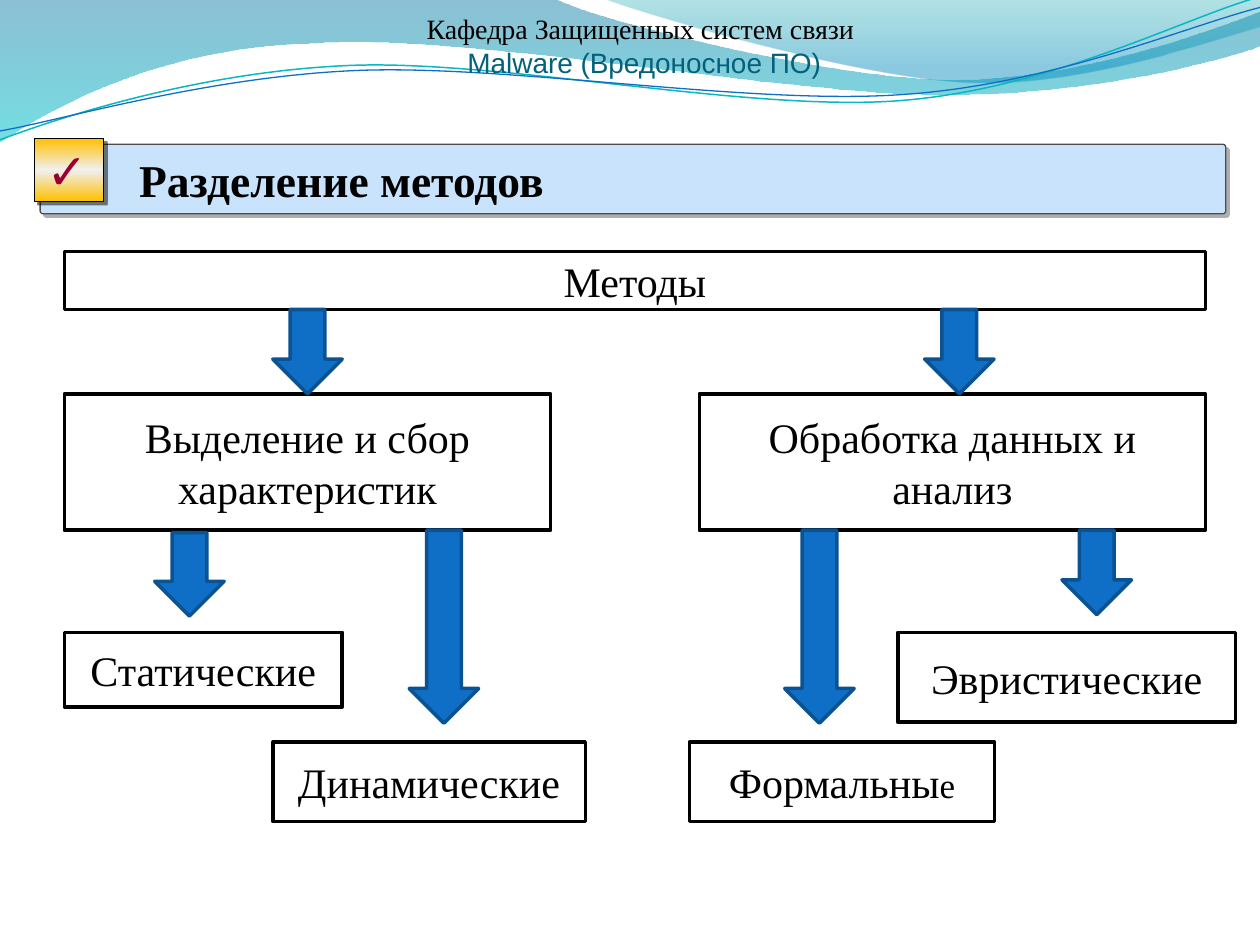
from math import cos, radians, sin

from pptx import Presentation
from pptx import util as u
from pptx.dml.color import RGBColor
from pptx.enum import shapes, text
from pptx.oxml import parse_xml
from pptx.oxml.ns import nsdecls, qn

BLACK = RGBColor(0, 0, 0)
WHITE = RGBColor(255, 255, 255)
TEAL = RGBColor(0x04, 0x61, 0x7B)
AQUA = RGBColor(0x0A, 0xB8, 0xBF)
BLUE = RGBColor(0x0F, 0x6F, 0xC6)
NAVY = RGBColor(0x0B, 0x52, 0x92)
SKY = RGBColor(0xC8, 0xE3, 0xFB)
GREY = RGBColor(0x4D, 0x4D, 0x4D)
WINE = RGBColor(0x99, 0x00, 0x33)
SERIF, SANS = "Times New Roman", "Arial"
KIND = shapes.MSO_SHAPE
MID = text.MSO_ANCHOR.MIDDLE
TILT = 2.7  # degrees by which the thin waves rise to the right

# Wave points in tenths of the band's width; a six-number step is a curve
FILLS = [
    ([(0, 0), (4.4, -.01), (4.76, .17, 6.64, .63, 7.58, .63),
      (8.53, .63, 9.58, .26, 10, .09), (10.01, .36),
      (9.83, .44, 8.7, .76, 7.46, .75), (6.22, .75, 3.82, .28, 2.57, .34),
      (1.29, .36, .46, .83, -.01, 1.13)],
     [(0, "0074A1", 45), (100, "00C6CF", 55)]),
    ([(4.79, -.01), (5.09, .11, 6.82, .62, 7.69, .65),
      (8.56, .69, 9.61, .32, 10, .21), (10, 0)],
     [(0, "00A1A9", 30), (80, "008BBF", 45)]),
]
LINES = [
    ([(0, 1.11), (.48, .93, 1.58, .57, 2.77, .52),
      (3.95, .47, 5.93, .89, 7.13, .8), (8.33, .71, 9.38, .15, 9.98, -.02)],
     AQUA, .85),
    ([(0, 1.04), (.47, .96, 1.64, .61, 2.83, .56),
      (4.03, .51, 5.97, .84, 7.17, .75), (8.36, .67, 9.41, .21, 10, .06)],
     BLUE, .75),
]

# Diagram parts in cm from its corner: left, top, width, height, label
BOXES = [
    (0, 0, 23, 1.17, "Методы"),
    (0, 2.87, 9.8, 2.75, "Выделение и сбор характеристик"),
    (12.8, 2.87, 10.2, 2.75, "Обработка данных и анализ"),
    (0, 7.68, 5.6, 1.5, "Статические"),
    (4.2, 9.89, 6.3, 1.6, "Динамические"),
    (12.6, 9.89, 6.15, 1.6, "Формальные"),
    (16.8, 7.68, 6.81, 1.81, "Эвристические"),
]
ARROWS = [(4.2, 1.17, 1.7), (17.34, 1.17, 1.7), (6.95, 5.62, 3.89),
          (14.52, 5.62, 3.89), (20.11, 5.62, 1.7), (1.82, 5.67, 1.68)]


def pairs(step):
    return list(zip(step[::2], step[1::2]))


def turn(steps, angle):
    """Turn wave steps clockwise about the middle of their ends."""
    (ax, ay), (bx, by) = steps[0], steps[-1][-2:]
    mx, my = (ax + bx) / 2, (ay + by) / 2
    c, s = cos(radians(angle)), sin(radians(angle))
    return [sum(((mx + (x - mx) * c - (y - my) * s,
                  my + (x - mx) * s + (y - my) * c)
                 for x, y in pairs(step)), ()) for step in steps]


def blend(shape, stops):
    """Give a shape a top-to-bottom gradient of (place, colour, opacity)."""
    gs = "".join(f'<a:gs pos="{p * 1000}"><a:srgbClr val="{c}">'
                 f'<a:alpha val="{o * 1000}"/></a:srgbClr></a:gs>'
                 for p, c, o in stops)
    shape.fill.background()
    props = shape._element.spPr
    props.replace(props.find(qn("a:noFill")), parse_xml(
        f'<a:gradFill {nsdecls("a")}><a:gsLst>{gs}</a:gsLst>'
        '<a:lin ang="5400000" scaled="0"/></a:gradFill>'))


def shade(shape, color, alpha):
    """Drop a hard shadow to the lower right."""
    shape._element.spPr.find(qn("a:effectLst")).append(parse_xml(
        f'<a:outerShdw {nsdecls("a")} blurRad="0" dist="35560" dir="2700000" '
        f'algn="ctr" rotWithShape="0"><a:srgbClr val="{color}">'
        f'<a:alpha val="{alpha * 1000}"/></a:srgbClr></a:outerShdw>'))


def block(slide, kind, box, fill, line, width):
    shape = slide.shapes.add_shape(kind, *map(u.Cm, box))
    shape.shadow.inherit = False
    shape.fill.solid()
    shape.fill.fore_color.rgb = fill
    shape.line.color.rgb = line
    shape.line.width = u.Pt(width)
    return shape


def write(shape, words, size, face, color, align):
    frame = shape.text_frame
    frame.vertical_anchor = MID
    par = frame.paragraphs[0]
    par.text = words
    par.alignment = align
    font = par.font
    font.size, font.name, font.color.rgb = u.Pt(size), face, color
    return par


def waves(slide, box):
    x, y, w = box
    unit = w / 10

    def draw(steps, close):
        spots = [[(u.Cm(x + a * unit), u.Cm(y + b * unit))
                  for a, b in pairs(step)] for step in steps]
        ends = [spot[-1] for spot in spots]
        form = slide.shapes.build_freeform(*ends[0])
        form.add_line_segments(ends[1:], close=close)
        shape = form.convert_to_shape()
        shape.shadow.inherit = False
        # Bend the segments that have control points
        parts = list(shape._element.iter(qn("a:lnTo")))
        for part, spot in zip(parts, spots[1:]):
            if len(spot) == 3:
                pts = "".join(f'<a:pt x="{a - shape.left}" '
                              f'y="{b - shape.top}"/>' for a, b in spot)
                part.getparent().replace(part, parse_xml(
                    f'<a:cubicBezTo {nsdecls("a")}>{pts}</a:cubicBezTo>'))
        return shape

    for steps, stops in FILLS:
        shape = draw(steps, True)
        blend(shape, stops)
        shape.line.fill.background()
    for steps, color, width in LINES:
        shape = draw(turn(steps, TILT), False)
        shape.rotation = -TILT
        shape.fill.background()
        shape.line.color.rgb = color
        shape.line.width = u.Pt(width)


def header(slide, box):
    title = slide.shapes.title
    slide.shapes._spTree.append(title._element)  # bring above the waves
    title.left, title.top, title.width, title.height = map(u.Cm, box)
    frame = title.text_frame
    frame.word_wrap = True
    frame.auto_size = text.MSO_AUTO_SIZE.NONE
    frame.vertical_anchor = text.MSO_ANCHOR.BOTTOM
    frame.margin_left = frame.margin_right = frame.margin_bottom = 0
    par = frame.paragraphs[0]
    par.alignment = text.PP_ALIGN.CENTER
    par.font.size = u.Pt(16)
    rows = [("Кафедра Защищенных систем связи", SERIF, BLACK),
            (" Malware (Вредоносное ПО)", SANS, TEAL)]
    for i, (words, face, color) in enumerate(rows):
        if i:
            par.add_line_break()
        run = par.add_run()
        run.text = words
        run.font.name, run.font.color.rgb = face, color


def banner(slide, box):
    x, y, w, h = box
    # Heading bar
    bar = block(slide, KIND.ROUNDED_RECTANGLE, box, SKY, GREY, .75)
    bar.adjustments[0] = .04
    shade(bar, "AFAFAF", 100)
    bar.text_frame.margin_left = u.Cm(1.98)
    par = write(bar, "Разделение методов", 26, SERIF, BLACK,
                text.PP_ALIGN.LEFT)
    par.font.bold = True
    # Check mark tile
    tile = block(slide, KIND.ROUNDED_RECTANGLE, (x - .12, y - .12, 1.4, 1.27),
                 WHITE, BLACK, .75)
    tile.adjustments[0] = 0
    blend(tile, [(0, "FFC000", 100), (50, "F0F0F0", 100),
                 (100, "FFC000", 100)])
    shade(tile, "000000", 50)
    tile.text_frame.word_wrap = False
    write(tile, "✓", 28, SANS, WINE, text.PP_ALIGN.LEFT)


def scheme(slide, box):
    x, y = box
    for a, b, w, h, words in BOXES:
        shape = block(slide, KIND.FLOWCHART_PROCESS, (x + a, y + b, w, h),
                      WHITE, BLACK, 2)
        par = write(shape, words, 24, SERIF, BLACK, text.PP_ALIGN.CENTER)
        if words == "Формальные":  # its last letter is smaller
            par.runs[0].text = words[:-1]
            run = par.add_run()
            run.text = words[-1]
            run.font.size = u.Pt(20)
    for a, b, h in ARROWS:
        block(slide, KIND.DOWN_ARROW, (x + a, y + b, 1.4, h), BLUE, NAVY, 2)


def main():
    deck = Presentation()
    deck.slide_width, deck.slide_height = u.Cm(25.4), u.Cm(19.05)
    slide = deck.slides.add_slide(deck.slide_layouts[5])
    waves(slide, (0, 0, 25.4))
    header(slide, (5.76, .01, 14.3, 1.58))
    banner(slide, (.81, 2.91, 23.9, 1.4))
    scheme(slide, (1.3, 5.07))
    deck.save("out.pptx")


if __name__ == "__main__":
    main()
